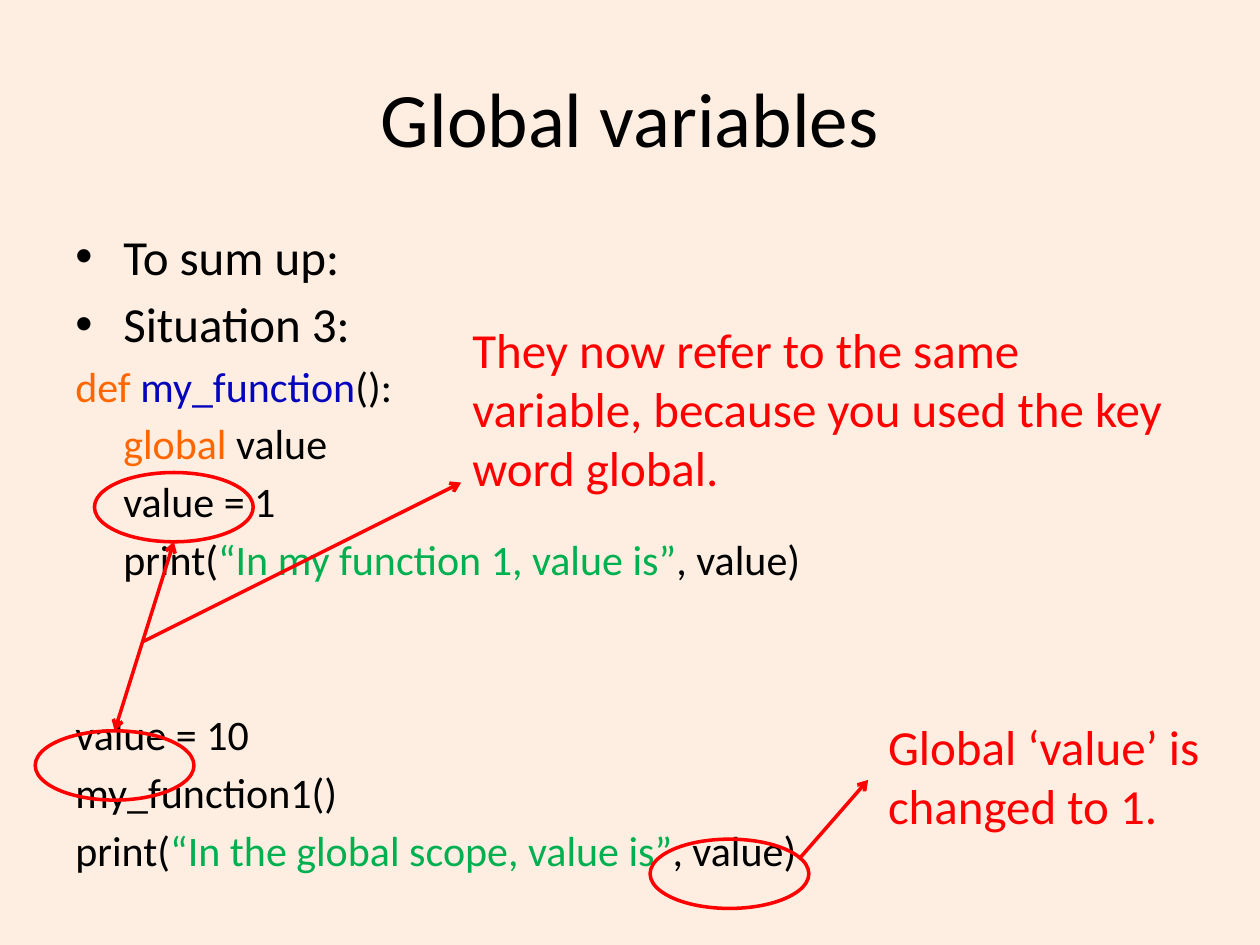
"""Build a slide that explains the global keyword with annotated code."""
from lxml import etree
from pptx import Presentation
from pptx.dml.color import RGBColor
from pptx.enum import shapes, text
from pptx.oxml import ns
from pptx.util import Inches, Pt

BLACK, RED, ORANGE, BLUE, GREEN = "000000", "FF0000", "FF6600", "0404BC", "00B050"
INDENT = Inches(0.38)


def paint(color_format, value):
    color_format.rgb = RGBColor.from_string(value)


def add_text(page, area, lines, anchor=text.MSO_ANCHOR.TOP, align=text.PP_ALIGN.LEFT):
    box = page.shapes.add_textbox(*map(Inches, area))
    frame = box.text_frame
    frame.word_wrap = True
    frame.vertical_anchor = anchor
    for number, (style, size, before, spans) in enumerate(lines):
        para = frame.paragraphs[0] if number == 0 else frame.add_paragraph()
        para.alignment = align
        para.space_before = Pt(before)
        properties = para._p.get_or_add_pPr()
        if style != "flush":
            properties.set("marL", str(INDENT))
        if style == "bullet":
            properties.set("indent", str(-INDENT))
            etree.SubElement(properties, ns.qn("a:buFont"), typeface="Arial")
            etree.SubElement(properties, ns.qn("a:buChar"), char="•")
        for words, color in spans:
            span = para.add_run()
            span.text = words
            span.font.name = "Calibri"
            span.font.size = Pt(size)
            paint(span.font.color, color)


deck = Presentation()
deck.slide_width, deck.slide_height = Inches(10), Inches(7.5)
page = deck.slides.add_slide(deck.slide_layouts[6])
page.background.fill.solid()
paint(page.background.fill.fore_color, "FEEEE1")

add_text(page, (0.5, 0.3, 9, 1.25), [("flush", 44, 0, [("Global variables", BLACK)])],
         text.MSO_ANCHOR.MIDDLE, text.PP_ALIGN.CENTER)

add_text(page, (0.5, 1.75, 8.91, 5.46), [
    ("bullet", 28, 0, [("To sum up:", BLACK)]),
    ("bullet", 28, 4.8, [("Situation 3:", BLACK)]),
    ("flush", 24, 4.2, [("def ", ORANGE), ("my_function", BLUE), ("():", BLACK)]),
    ("indented", 24, 4.2, [("global", ORANGE), (" value", BLACK)]),
    ("indented", 24, 4.2, [("value = 1", BLACK)]),
    ("indented", 24, 4.2, [("print(", BLACK), ("“In my function 1, value is”", GREEN),
                           (", value)", BLACK)]),
    ("flush", 24, 71.4, [("value = 10", BLACK)]),
    ("flush", 24, 4.2, [("my_function1()", BLACK)]),
    ("flush", 24, 4.2, [("print(", BLACK), ("“In the global scope, value is”", GREEN),
                        (", value)", BLACK)]),
])

notes = [
    ((6.57, 5.64, 3.23, 1.42), "Global ‘value’ is changed to 1."),
    ((3.27, 2.49, 6.22, 1.73),
     "They now refer to the same variable, because you used the key word global."),
]
for area, words in notes:
    add_text(page, area, [("indented", 28, 0, [(words, RED)])])

for left, top in [(5.16, 6.66), (0.28, 5.8), (0.75, 3.75)]:
    ring = page.shapes.add_shape(shapes.MSO_SHAPE.OVAL, Inches(left), Inches(top),
                                 Inches(1.26), Inches(0.55))
    ring.shadow.inherit = False
    ring.fill.background()
    paint(ring.line.color, RED)
    ring.line.width = Pt(2)

arrows = [
    ((6.34, 6.82, 6.89, 6.19), ["tailEnd"]),
    ((0.91, 5.8, 1.38, 4.3), ["headEnd", "tailEnd"]),
    ((1.14, 5.09, 3.66, 3.83), ["tailEnd"]),
]
for ends, heads in arrows:
    arrow = page.shapes.add_connector(shapes.MSO_CONNECTOR.STRAIGHT, *map(Inches, ends))
    paint(arrow.line.color, RED)
    arrow.line.width = Pt(2)
    for head in heads:
        etree.SubElement(arrow.line._get_or_add_ln(), ns.qn(f"a:{head}"), type="arrow")
    etree.SubElement(arrow._element.spPr, ns.qn("a:effectLst"))

deck.save("out.pptx")
